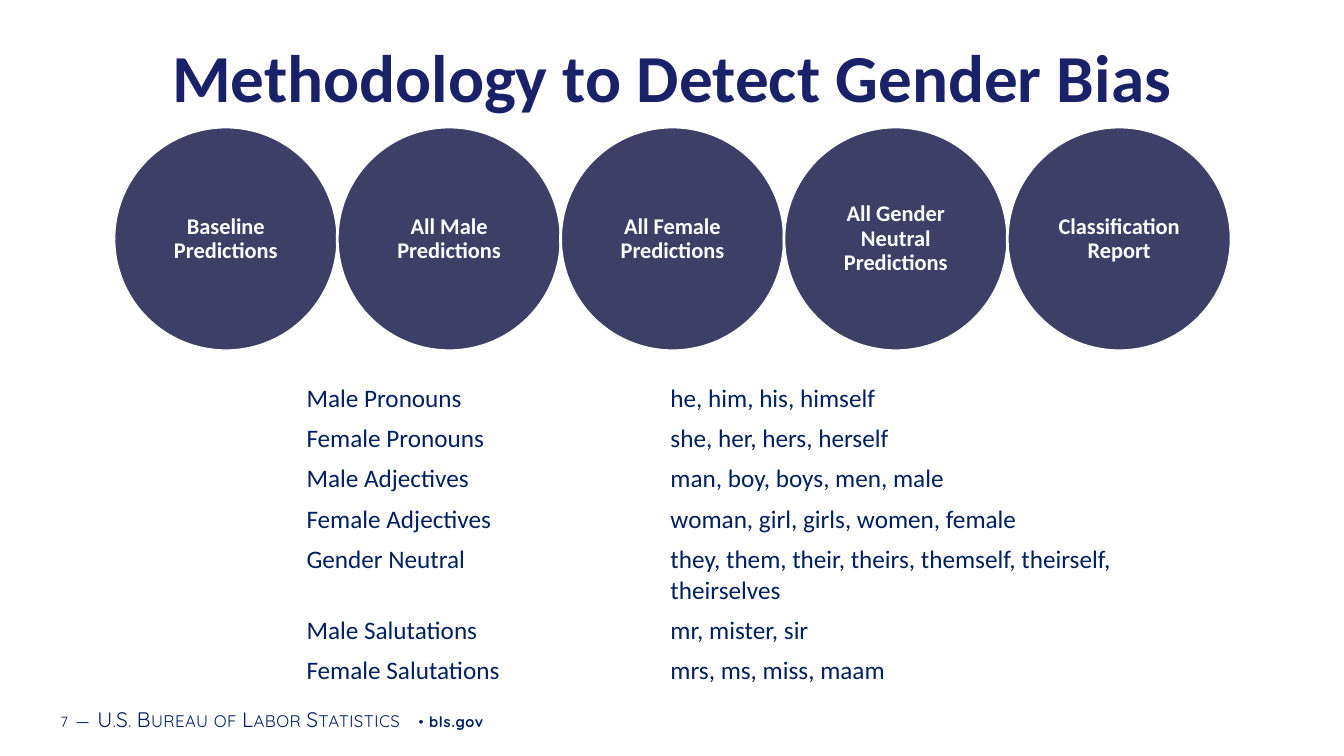
from pptx import Presentation
from pptx.dml.color import RGBColor
from pptx.enum.shapes import MSO_SHAPE
from pptx.enum.text import MSO_ANCHOR, PP_ALIGN
from pptx.util import Inches, Pt

TITLE = "Methodology to Detect Gender Bias"
STEPS = [
    "Baseline Predictions",
    "All Male Predictions",
    "All Female Predictions",
    "All Gender Neutral Predictions",
    "Classification Report",
]
TERMS = [
    ("Male Pronouns", "he, him, his, himself"),
    ("Female Pronouns", "she, her, hers, herself"),
    ("Male Adjectives", "man, boy, boys, men, male"),
    ("Female Adjectives", "woman, girl, girls, women, female"),
    ("Gender Neutral", "they, them, their, theirs, themself, theirself, theirselves"),
    ("Male Salutations", "mr, mister, sir"),
    ("Female Salutations", "mrs, ms, miss, maam"),
]
# text, size, letter spacing in points, small caps, bold
FOOTER = [
    ("7", 10.5, 0.5, False, False),
    (" ", 16, 0.5, False, False),
    ("—", 15, 0.3, True, False),
    (" ", 16, 0.5, False, False),
    ("U.S. Bureau of Labor Statistics", 15, 0.3, True, False),
    (" • ", 10.5, 0.5, False, False),
    ("bls.gov", 10.5, 0.5, False, True),
]
THEME = {
    "title": RGBColor(0x19, 0x21, 0x68),
    "body": RGBColor(0x00, 0x20, 0x60),
    "circle": RGBColor(0x3E, 0x3F, 0x67),
    "white": RGBColor(0xFF, 0xFF, 0xFF),
    "font": "Calibri",
    "footer_font": "Quicksand",
    "title_size": 48,
    "step_size": 16,
    "table_size": 18,
}


def set_font(font, size, color, bold=False, name=THEME["font"]):
    font.name, font.size, font.bold = name, Pt(size), bold
    font.color.rgb = color


def add_text_box(s, left, top, width, height):
    tf = s.shapes.add_textbox(*map(Inches, (left, top, width, height))).text_frame
    tf.word_wrap = True
    return tf


def add_title(s):
    p = add_text_box(s, 0.54, 0.3, 12.25, 1.2).paragraphs[0]
    p.text = TITLE
    p.alignment = PP_ALIGN.CENTER
    set_font(p.font, THEME["title_size"], THEME["title"], True)


def add_steps(s):
    left, top, size, pitch = 1.13, 1.26, 2.22, 2.215
    for i, step in enumerate(STEPS):
        sp = s.shapes.add_shape(MSO_SHAPE.OVAL, Inches(left + i * pitch), Inches(top),
                                Inches(size), Inches(size))
        sp.shadow.inherit = False
        sp.fill.solid()
        sp.fill.fore_color.rgb = THEME["circle"]
        sp.line.color.rgb = THEME["white"]
        sp.line.width = Pt(2)
        tf = sp.text_frame
        tf.word_wrap = True
        tf.vertical_anchor = MSO_ANCHOR.MIDDLE
        tf.margin_left = tf.margin_right = tf.margin_top = tf.margin_bottom = 0
        p = tf.paragraphs[0]
        p.text = step
        p.alignment = PP_ALIGN.CENTER
        p.line_spacing = 0.9
        set_font(p.font, THEME["step_size"], THEME["white"], True)


def add_terms(s):
    widths, row_height = (3.61, 5.09), 0.4
    table = s.shapes.add_table(len(TERMS), len(widths), Inches(2.94), Inches(3.75),
                               Inches(sum(widths)), Inches(row_height * len(TERMS))).table
    table.first_row = table.horz_banding = False
    for column, width in zip(table.columns, widths):
        column.width = Inches(width)
    for row, texts in zip(table.rows, TERMS):
        for cell, text in zip(row.cells, texts):
            cell.fill.background()
            p = cell.text_frame.paragraphs[0]
            p.text = text
            set_font(p.font, THEME["table_size"], THEME["body"])


def add_footer(s):
    tf = add_text_box(s, 0.53, 6.93, 8.47, 0.4)
    tf.vertical_anchor = MSO_ANCHOR.MIDDLE
    tf.margin_left = tf.margin_right = Inches(0.07)
    tf.margin_top = tf.margin_bottom = Inches(0.04)
    p = tf.paragraphs[0]
    for text, size, spacing, small_caps, bold in FOOTER:
        r = p.add_run()
        r.text = text
        set_font(r.font, size, THEME["body"], bold, THEME["footer_font"])
        props = r._r.get_or_add_rPr()
        props.set("spc", str(round(spacing * 100)))
        if small_caps:
            props.set("cap", "small")


def main():
    prs = Presentation()
    prs.slide_width, prs.slide_height = Inches(13.33), Inches(7.5)
    s = prs.slides.add_slide(prs.slide_layouts[6])
    add_footer(s)
    add_title(s)
    add_terms(s)
    add_steps(s)
    prs.save("out.pptx")


if __name__ == "__main__":
    main()
